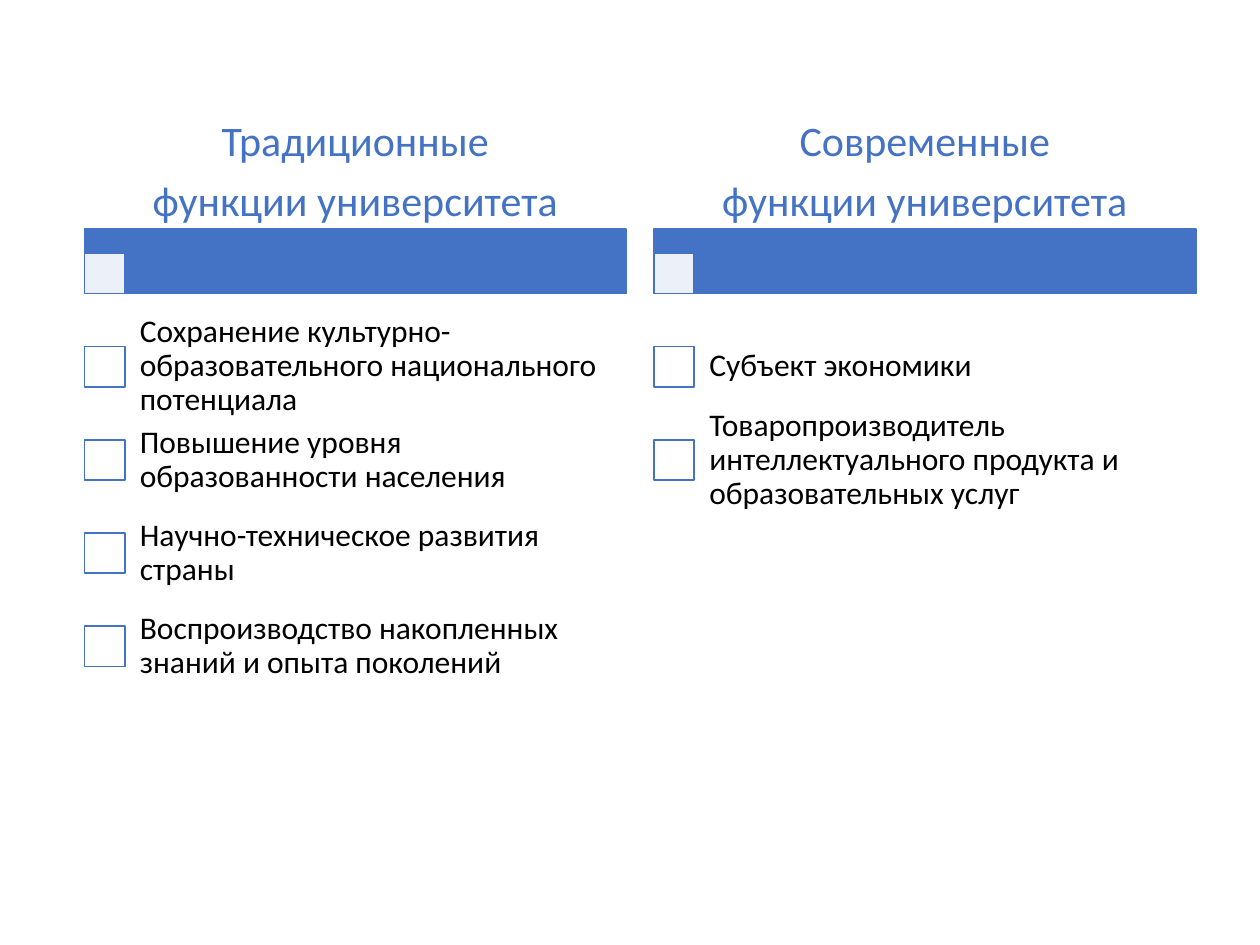
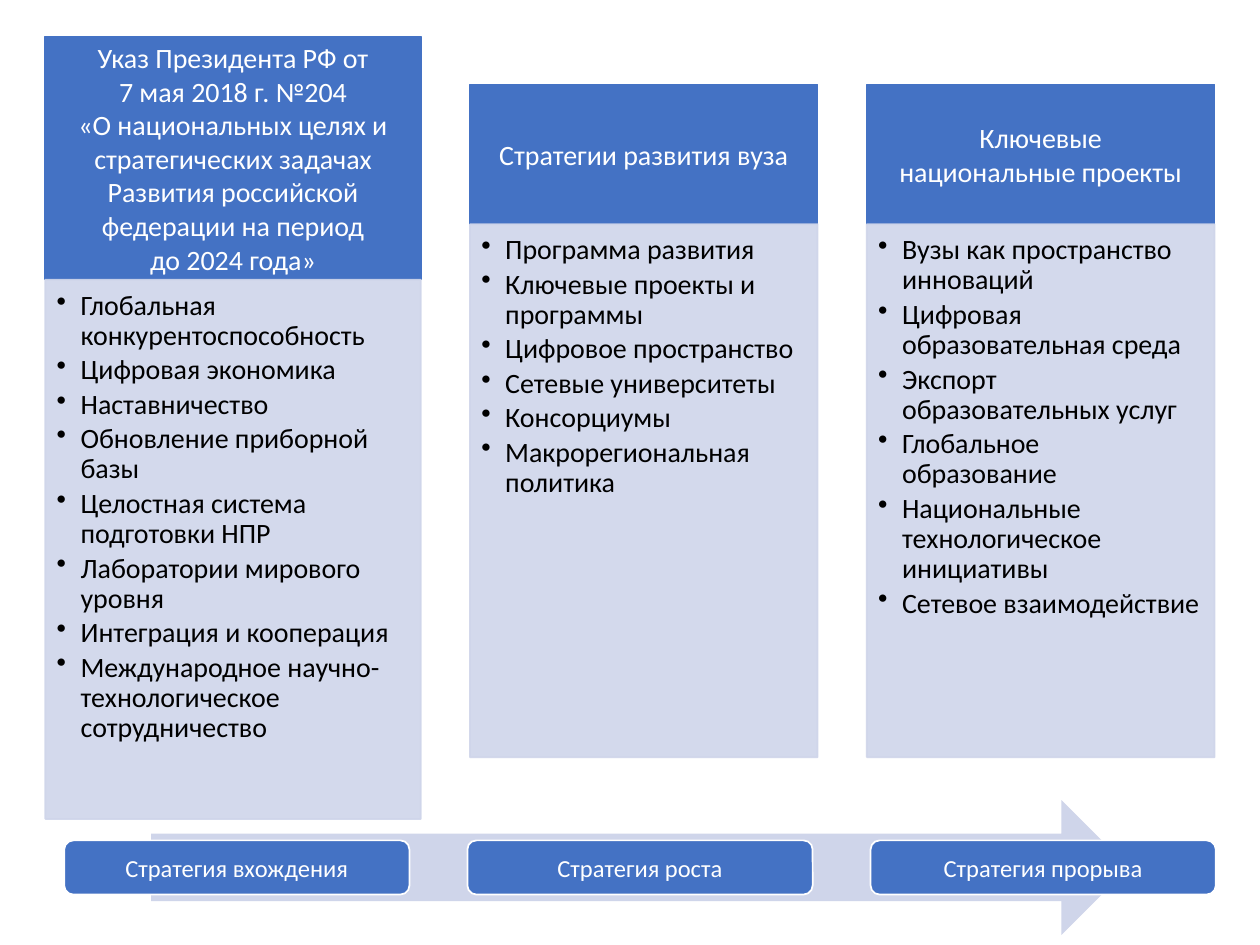
import pptx
import pptx.dml.color
import pptx.enum.shapes
import pptx.enum.text
import pptx.oxml
import pptx.oxml.ns
import pptx.util
from pptx.util import Inches

RGBColor = pptx.dml.color.RGBColor
BLUE = RGBColor(0x44, 0x72, 0xC4)
PALE = RGBColor(0xCF, 0xD5, 0xEA)
WHITE = RGBColor(0xFF, 0xFF, 0xFF)
BLACK = RGBColor(0x00, 0x00, 0x00)

SHAPE = pptx.enum.shapes.MSO_SHAPE
ALIGN = pptx.enum.text.PP_ALIGN
ANCHOR = pptx.enum.text.MSO_ANCHOR
Pt = pptx.util.Pt

# Text styles: font, paragraph format, and insets (left, top, right, bottom)
CENTRED = {"alignment": ALIGN.CENTER}
TIGHT = {"line_spacing": 0.9}
STYLES = {
    "heading": {"font": (24, BLUE), "insets": (0.05, 0.03, 0.05, 0.03),
                "paragraph": CENTRED | TIGHT | {"space_after": Pt(8.4)}},
    "function": {"font": (18, BLACK), "insets": (0.14,) * 4,
                 "paragraph": TIGHT | {"alignment": ALIGN.LEFT, "space_after": Pt(6.3)}},
    "card head": {"font": (16, WHITE), "insets": (0.12, 0.07, 0.12, 0.07),
                  "paragraph": CENTRED},
    "card list": {"font": (16, BLACK), "insets": (0.09, 0.09, 0.12, 0.14),
                  "anchor": ANCHOR.TOP, "bullet": True,
                  "paragraph": TIGHT | {"alignment": ALIGN.LEFT, "level": 1,
                                        "space_after": Pt(2.4)}},
    "strategy": {"font": (14, WHITE), "insets": (0.06,) * 4,
                 "paragraph": CENTRED},
}


class Deck:
    """Holds the shared style and the slide being drawn."""

    font_name = "Calibri"
    bullet_indent = Inches(0.19)

    def __init__(self):
        self.presentation = pptx.Presentation()
        self.presentation.slide_width = Inches(10)
        self.presentation.slide_height = Inches(7.5)
        self.slide = None

    def new_slide(self):
        blank = self.presentation.slide_layouts[6]
        self.slide = self.presentation.slides.add_slide(blank)

    def shape(self, kind, box, fill, line=None, opacity=100):
        drawn = self.slide.shapes.add_shape(kind, *map(Inches, box))
        drawn.shadow.inherit = False
        drawn.fill.solid()
        drawn.fill.fore_color.rgb = fill
        if line is None:
            drawn.line.fill.background()
        else:
            drawn.line.color.rgb = line
            drawn.line.width = Pt(1)
        if opacity < 100:
            for colour in drawn.element.spPr.iter(pptx.oxml.ns.qn("a:srgbClr")):
                if colour.get("val") == str(fill):
                    colour.append(pptx.oxml.parse_xml(
                        f'<a:alpha {pptx.oxml.ns.nsdecls("a")} val="{opacity * 1000}"/>'))
        return drawn

    def text_box(self, box, lines, style):
        holder = self.slide.shapes.add_textbox(*map(Inches, box))
        self.set_text(holder, lines, style)

    def set_text(self, holder, lines, style):
        look = STYLES[style]
        frame = holder.text_frame
        sides = ("margin_left", "margin_top", "margin_right", "margin_bottom")
        layout = dict(zip(sides, map(Inches, look["insets"])))
        layout |= {"word_wrap": True,
                   "vertical_anchor": look.get("anchor", ANCHOR.MIDDLE)}
        for name, value in layout.items():
            setattr(frame, name, value)
        size, colour = look["font"]
        for number, line in enumerate(lines):
            paragraph = frame.paragraphs[0] if number == 0 else frame.add_paragraph()
            for name, value in look["paragraph"].items():
                setattr(paragraph, name, value)
            run = paragraph.add_run()
            run.text = line
            run.font.color.rgb = colour
            for name, value in {"name": self.font_name, "size": Pt(size)}.items():
                setattr(run.font, name, value)
            if look.get("bullet"):
                self.add_bullet(paragraph)

    def add_bullet(self, paragraph):
        properties = paragraph._p.get_or_add_pPr()
        properties.set("marL", str(self.bullet_indent))
        properties.set("indent", str(-self.bullet_indent))
        properties.append(pptx.oxml.parse_xml(
            f'<a:buChar {pptx.oxml.ns.nsdecls("a")} char="•"/>'))

    def function_column(self, left, heading, functions):
        width, tick = 4.3, 0.32
        self.shape(SHAPE.RECTANGLE, (left, 1.82, width, 0.51), BLUE, BLUE)
        self.shape(SHAPE.RECTANGLE, (left, 2.01, tick, tick), WHITE, BLUE, opacity=90)
        self.text_box((left, 0.92, width, 0.91), heading, "heading")
        row_height = 0.74
        for row, function in enumerate(functions):
            top = 2.54 + row * row_height
            self.shape(SHAPE.RECTANGLE, (left, top + 0.21, tick, tick), WHITE, BLUE)
            self.text_box((left + 0.3, top, 4, row_height), [function], "function")

    def card(self, left, top, width, head_height, list_height, head, items):
        header = self.shape(SHAPE.RECTANGLE, (left, top, width, head_height), BLUE, BLUE)
        self.set_text(header, head, "card head")
        body = self.shape(SHAPE.RECTANGLE, (left, top + head_height, width, list_height),
                          PALE, PALE, opacity=90)
        self.set_text(body, items, "card list")

    def strategy(self, left, name):
        step = self.shape(SHAPE.ROUNDED_RECTANGLE, (left, 6.67, 2.74, 0.43), BLUE, WHITE)
        self.set_text(step, [name], "strategy")


def build_functions(deck):
    deck.new_slide()
    deck.function_column(0.67, ["Традиционные", "функции университета"], [
        "Сохранение культурно-образовательного национального потенциала",
        "Повышение уровня образованности населения",
        "Научно-техническое развития страны",
        "Воспроизводство накопленных знаний и опыта поколений",
    ])
    deck.function_column(5.19, ["Современные", "функции университета"], [
        "Субъект экономики",
        "Товаропроизводитель интеллектуального продукта и образовательных услуг",
    ])


def build_strategies(deck):
    deck.new_slide()

    # Arrow with the three strategies
    deck.shape(SHAPE.RIGHT_ARROW, (1.2, 6.35, 7.76, 1.07), PALE)
    strategies = ("Стратегия вхождения", "Стратегия роста", "Стратегия прорыва")
    for step, name in enumerate(strategies):
        deck.strategy(0.51 + step * 3.2, name)

    # Decree, with a larger card than the other two
    deck.card(0.36, 0.29, 2.98, 1.93, 4.28, [
        "Указ Президента РФ от",
        "7 мая 2018 г. №204",
        "«О национальных целях и стратегических задачах "
        "Развития российской федерации на период",
        "до 2024 года»",
    ], [
        "Глобальная конкурентоспособность",
        "Цифровая экономика",
        "Наставничество",
        "Обновление приборной базы",
        "Целостная система подготовки НПР",
        "Лаборатории мирового уровня",
        "Интеграция и кооперация",
        "Международное научно-технологическое сотрудничество",
    ])

    # University strategies and national projects
    small_card = (0.67, 2.76, 1.11, 4.23)
    deck.card(3.73, *small_card, ["Стратегии развития вуза"], [
        "Программа развития",
        "Ключевые проекты и программы",
        "Цифровое пространство",
        "Сетевые университеты",
        "Консорциумы",
        "Макрорегиональная политика",
    ])
    deck.card(6.88, *small_card, ["Ключевые", "национальные проекты"], [
        "Вузы как пространство инноваций",
        "Цифровая образовательная среда",
        "Экспорт образовательных услуг",
        "Глобальное образование",
        "Национальные технологическое инициативы",
        "Сетевое взаимодействие",
    ])


def main():
    deck = Deck()
    build_functions(deck)
    build_strategies(deck)
    deck.presentation.save("out.pptx")


if __name__ == "__main__":
    main()
